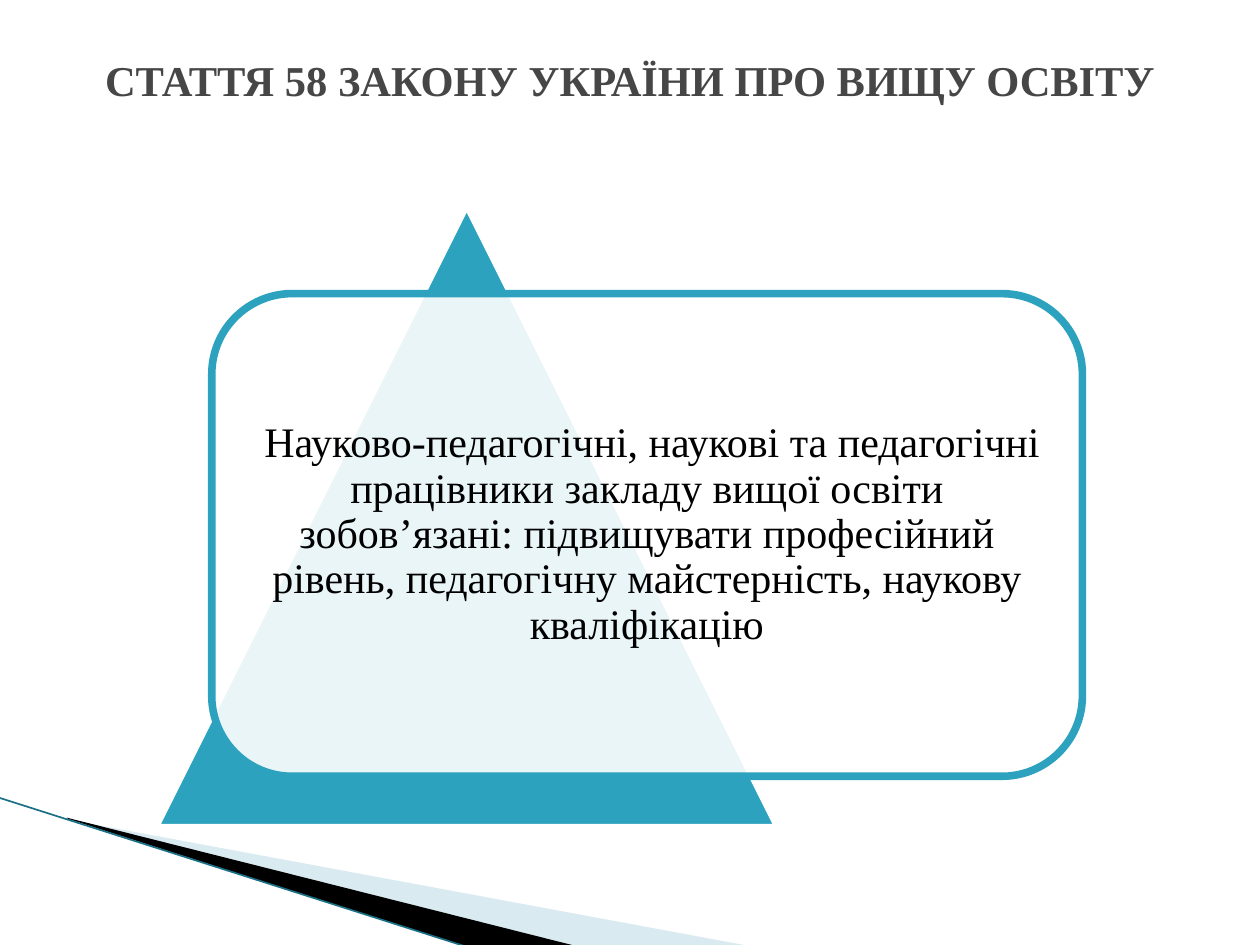
"""Build the slide on article 58 with its triangle and framed duty."""
from dataclasses import dataclass
from typing import Optional

from lxml.etree import SubElement
from pptx import Presentation
from pptx.dml.color import RGBColor
from pptx.enum.shapes import MSO_CONNECTOR, MSO_SHAPE
from pptx.enum.text import MSO_ANCHOR, PP_ALIGN
from pptx.oxml.ns import qn
from pptx.util import Pt


@dataclass(frozen=True)
class Theme:
    """Colours, font and sizes."""
    white: str = "FFFFFF"
    black: str = "000000"
    teal: str = "2DA2BF"
    deep: str = "1B7085"
    pale: str = "A0CBDC"
    grey: str = "464646"
    font: str = "Times New Roman"
    head: float = 24.3
    body: float = 24
    edge: float = 4.33
    thin: float = 0.95


@dataclass(frozen=True)
class Wedge:
    """A corner wedge, with points in pt."""
    dots: tuple
    fill: str
    alpha: Optional[int] = None


@dataclass(frozen=True)
class Block:
    """A preset shape, with its box in pt."""
    kind: MSO_SHAPE
    box: tuple
    fill: str
    line: str
    alpha: Optional[int] = None


THEME = Theme()
WEDGES = (
    Wedge(((39.6, 468.5), (428.4, 540.6), (328.4, 540.6), (39.6, 468)), THEME.pale, 40),
    Wedge(((38.2, 467.3), (329, 540.6), (267.8, 541.4), (38.9, 468)), THEME.black),
)
BLOCKS = (
    Block(MSO_SHAPE.ISOSCELES_TRIANGLE, (88.5, 116.6, 356.4, 356.4), THEME.teal, THEME.white),
    Block(MSO_SHAPE.ROUNDED_RECTANGLE, (121, 167.8, 497.5, 275.8), THEME.white, THEME.teal, 90),
)


def tint(shape, fill: str, alpha: Optional[int]) -> None:
    """Fill a shape with a colour, see-through if alpha is given."""
    shape.shadow.inherit = False
    shape.fill.solid()
    shape.fill.fore_color.rgb = RGBColor.from_string(fill)
    if alpha is not None:
        tone = shape.element.spPr.find(qn("a:solidFill")).find(qn("a:srgbClr"))
        SubElement(tone, qn("a:alpha")).set("val", str(alpha * 1000))


def add_wedge(slide, wedge: Wedge) -> None:
    """Draw a wedge."""
    dots = [(Pt(x), Pt(y)) for x, y in wedge.dots]
    form = slide.shapes.build_freeform(*dots[0], scale=1.0)
    form.add_line_segments(dots[1:], close=True)
    shape = form.convert_to_shape()
    tint(shape, wedge.fill, wedge.alpha)
    shape.line.fill.background()


def add_block(slide, block: Block) -> None:
    """Draw a block."""
    shape = slide.shapes.add_shape(block.kind, *map(Pt, block.box))
    tint(shape, block.fill, block.alpha)
    shape.line.color.rgb = RGBColor.from_string(block.line)
    shape.line.width = Pt(THEME.edge)


def add_rule(slide, start: tuple, end: tuple) -> None:
    """Draw the thin line along the wedges."""
    rule = slide.shapes.add_connector(MSO_CONNECTOR.STRAIGHT, *map(Pt, start + end))
    rule.line.color.rgb = RGBColor.from_string(THEME.deep)
    rule.line.width = Pt(THEME.thin)
    SubElement(rule.element.spPr, qn("a:effectLst"))


def set_text(shape, text: str, *, size: float, color: str, inset: tuple,
             bold: bool = False, lead: float = 1.0) -> None:
    """Write centred text into a shape."""
    frame = shape.text_frame
    frame.word_wrap = True
    frame.vertical_anchor = MSO_ANCHOR.MIDDLE
    (frame.margin_left, frame.margin_top,
     frame.margin_right, frame.margin_bottom) = map(Pt, inset)
    para = frame.paragraphs[0]
    para.alignment = PP_ALIGN.CENTER
    para.line_spacing = lead
    run = para.add_run()
    run.text = text
    run.font.name = THEME.font
    run.font.size = Pt(size)
    run.font.bold = bold
    run.font.color.rgb = RGBColor.from_string(color)


def main() -> None:
    """Build and save the deck."""
    deck = Presentation()
    deck.slide_width, deck.slide_height = Pt(720), Pt(540)
    slide = deck.slides.add_slide(deck.slide_layouts[5])
    for wedge in WEDGES:
        add_wedge(slide, wedge)
    add_rule(slide, (-0.7, 455.8), (267.8, 541.4))
    for block in BLOCKS:
        add_block(slide, block)
    note = slide.shapes.add_textbox(*map(Pt, (134.6, 181.4, 470.2, 248.4)))
    set_text(note, " Науково-педагогічні, наукові та педагогічні працівники закладу "
             "вищої освіти зобов’язані: підвищувати професійний рівень, "
             "педагогічну майстерність, наукову кваліфікацію",
             size=THEME.body, color=THEME.black, inset=(7.2,) * 4, lead=0.9)
    title = slide.shapes.title
    title.left, title.top, title.width, title.height = map(Pt, (36, 21.6, 648, 90))
    set_text(title, "СТАТТЯ 58 ЗАКОНУ УКРАЇНИ ПРО ВИЩУ ОСВІТУ",
             size=THEME.head, color=THEME.grey, inset=(7.2, 0, 7.2, 42), bold=True)
    deck.save("out.pptx")


if __name__ == "__main__":
    main()
